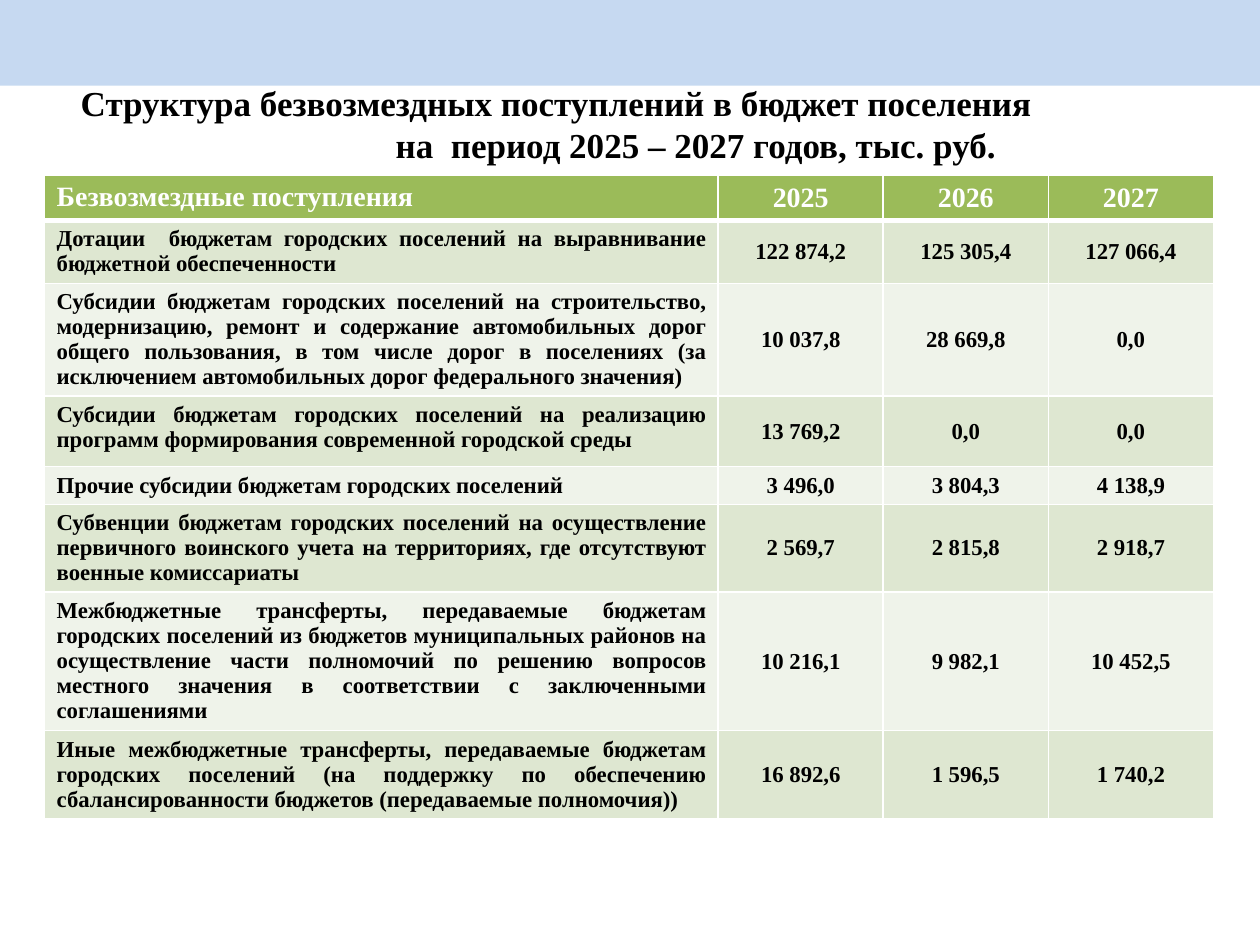
from pptx import Presentation
from pptx.dml.color import RGBColor
from pptx.enum.shapes import MSO_SHAPE
from pptx.enum.text import MSO_ANCHOR, PP_ALIGN
from pptx.oxml import parse_xml
from pptx.oxml.ns import nsdecls
from pptx.util import Inches, Pt

RECT = MSO_SHAPE.RECTANGLE
TOP, MID = MSO_ANCHOR.TOP, MSO_ANCHOR.MIDDLE
LEFT, CENTER, JUST = PP_ALIGN.LEFT, PP_ALIGN.CENTER, PP_ALIGN.JUSTIFY

THEME = {
    "font": "Times New Roman", "title": 20, "head": 16, "body": 13,
    "black": "000000", "white": "FFFFFF", "band": "C6D9F1",
    "green": "9BBB59", "rows": ("DEE7D1", "EFF3EA"),
}

# Text and left indent of each title line
TITLE = [
    ("Структура безвозмездных поступлений в бюджет поселения", 0),
    ("на  период 2025 – 2027 годов, тыс. руб.", 2.5),
]
HEAD = ("Безвозмездные поступления", "2025", "2026", "2027")
ROWS = [
    ("Дотации  бюджетам городских поселений на выравнивание бюджетной "
     "обеспеченности", "122 874,2", "125 305,4", "127 066,4"),
    ("Субсидии бюджетам городских поселений на строительство, модернизацию, "
     "ремонт и содержание автомобильных дорог общего пользования, в том числе "
     "дорог в поселениях (за исключением автомобильных дорог федерального "
     "значения)", "10 037,8", "28 669,8", "0,0"),
    ("Субсидии бюджетам городских поселений на реализацию программ "
     "формирования современной городской среды", "13 769,2", "0,0", "0,0"),
    ("Прочие субсидии бюджетам городских поселений",
     "3 496,0", "3 804,3", "4 138,9"),
    ("Субвенции бюджетам городских поселений на осуществление первичного "
     "воинского учета на территориях, где отсутствуют военные комиссариаты",
     "2 569,7", "2 815,8", "2 918,7"),
    ("Межбюджетные трансферты, передаваемые бюджетам городских поселений из "
     "бюджетов муниципальных районов на осуществление части полномочий по "
     "решению вопросов местного значения в соответствии с заключенными "
     "соглашениями", "10 216,1", "9 982,1", "10 452,5"),
    ("Иные межбюджетные трансферты, передаваемые бюджетам городских поселений "
     "(на поддержку по обеспечению сбалансированности бюджетов (передаваемые "
     "полномочия))", "16 892,6", "1 596,5", "1 740,2"),
]
WIDTHS = (5.35, 1.31, 1.31, 1.31)
HEIGHTS = (0.36, 0.5, 0.89, 0.56, 0.3, 0.69, 1.1, 0.69)


def write(para, text, size="body", color="black", align=LEFT):
    para.alignment = align
    run = para.add_run()
    run.text = text
    font = run.font
    font.name, font.size, font.bold = THEME["font"], Pt(THEME[size]), True
    font.color.rgb = RGBColor.from_string(THEME[color])


def paint(fill, color):
    fill.solid()
    fill.fore_color.rgb = RGBColor.from_string(color)


def edge(cell, base):
    """Draw white cell borders; the bottom one is base points wide."""
    props = cell._tc.get_or_add_tcPr()
    sides = (("L", 1), ("R", 1), ("T", 1), ("B", base))
    for spot, (side, width) in enumerate(sides):
        props.insert(spot, parse_xml(
            f'<a:ln{side} {nsdecls("a")} w="{Pt(width)}"><a:solidFill>'
            f'<a:srgbClr val="{THEME["white"]}"/></a:solidFill></a:ln{side}>'))


def add_band(slide, width):
    band = slide.shapes.add_shape(RECT, 0, 0, width, Inches(0.68))
    band.shadow.inherit = False
    paint(band.fill, THEME["band"])
    band.line.fill.background()
    slide.shapes._spTree.insert(2, band._element)


def add_title(slide):
    title = slide.shapes.title
    title.left, title.top = Inches(0.54), Inches(0.6)
    title.width, title.height = Inches(9.5), Inches(1.02)
    frame = title.text_frame
    frame.word_wrap, frame.vertical_anchor = True, TOP
    for spot, (text, indent) in enumerate(TITLE):
        para = frame.add_paragraph() if spot else frame.paragraphs[0]
        para._p.get_or_add_pPr().set("marL", str(Inches(indent)))
        write(para, text, size="title")


def add_grid(slide):
    rows = [HEAD, *ROWS]
    grid = slide.shapes.add_table(
        len(rows), len(HEAD), Inches(0.35), Inches(1.39),
        Inches(sum(WIDTHS)), Inches(sum(HEIGHTS))).table
    for col, width in zip(grid.columns, WIDTHS):
        col.width = Inches(width)
    for row, height in zip(grid.rows, HEIGHTS):
        row.height = Inches(height)
    for r, row in enumerate(rows):
        head = r == 0
        for c, text in enumerate(row):
            cell = grid.cell(r, c)
            cell.vertical_anchor = MID if c else TOP
            paint(cell.fill, THEME["green"] if head
                  else THEME["rows"][(r - 1) % 2])
            edge(cell, 3 if head else 1)
            write(cell.text_frame.paragraphs[0], text,
                  size="head" if head else "body",
                  color="white" if head else "black",
                  align=CENTER if c else LEFT if head else JUST)


def main():
    deck = Presentation()
    deck.slide_width, deck.slide_height = Inches(10), Inches(7.5)
    slide = deck.slides.add_slide(deck.slide_layouts[5])
    add_band(slide, deck.slide_width)
    add_title(slide)
    add_grid(slide)
    deck.save("out.pptx")


if __name__ == "__main__":
    main()
